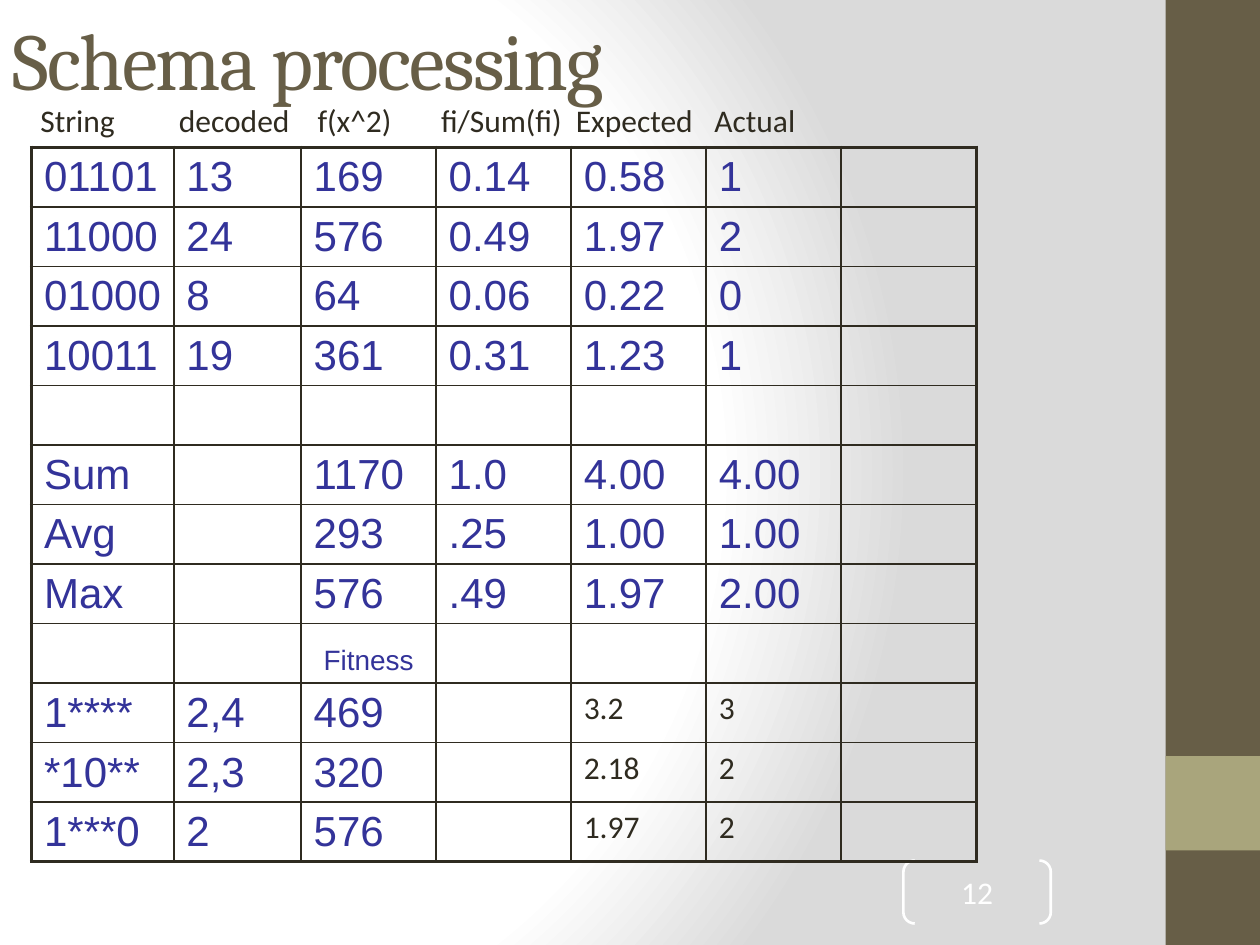
"""Build the schema processing slide with its table of strings and fitness values."""
from dataclasses import dataclass

import pptx
import pptx.dml.color
import pptx.enum.shapes
import pptx.enum.text
import pptx.oxml
import pptx.oxml.ns
import pptx.util
from pptx.util import Inches

Align = pptx.enum.text.PP_ALIGN
Anchor = pptx.enum.text.MSO_ANCHOR
Shapes = pptx.enum.shapes.MSO_SHAPE
NAMESPACES = pptx.oxml.ns.nsdecls("a", "p")

DARK, OLIVE, SAGE, WHITE, BLUE = "2F2B20", "675E47", "A9A57C", "FFFFFF", "333399"


@dataclass(frozen=True)
class TextStyle:
    font: str
    size: int
    color: str
    space_before: int = 0
    align: Align = Align.LEFT
    anchor: Anchor = Anchor.TOP
    tracking: int = 0


@dataclass(frozen=True)
class Band:
    left: float
    top: float
    width: float
    height: float
    color: str


TITLE = TextStyle("Cambria", 46, OLIVE, anchor=Anchor.MIDDLE, tracking=-100)
HEADING = TextStyle("Calibri", 18, DARK, space_before=50)
NUMBER = TextStyle("Calibri", 18, WHITE, align=Align.CENTER, anchor=Anchor.MIDDLE)
VALUE = TextStyle("Arial", 24, BLUE, space_before=20)
LABEL = TextStyle("Arial", 16, BLUE, 20, Align.CENTER, Anchor.BOTTOM)
COUNT = TextStyle("Calibri", 18, DARK)

BANDS = [Band(9.25, 0, 0.75, 7.5, OLIVE), Band(9.25, 6, 0.75, 0.75, SAGE)]
HEADINGS = ["String", "decoded", "f(x^2)", "fi/Sum(fi)", "Expected", "Actual"]
HEADING_TABS = [1.1, 2.2, 3.18, 4.25, 5.35]
TABLE_WIDTH, TABLE_HEIGHT = 7.5, 5.67
FIRST_WIDTHS = [1.13, 1.01]
COLUMN_WIDTHS = FIRST_WIDTHS + [(TABLE_WIDTH - sum(FIRST_WIDTHS)) / 5] * 5
SCHEMA_ROW, COUNT_COLUMN = 9, 4
ROWS = [
    ["01101", "13", "169", "0.14", "0.58", "1", ""],
    ["11000", "24", "576", "0.49", "1.97", "2", ""],
    ["01000", "8", "64", "0.06", "0.22", "0", ""],
    ["10011", "19", "361", "0.31", "1.23", "1", ""],
    [""] * 7,
    ["Sum", "", "1170", "1.0", "4.00", "4.00", ""],
    ["Avg", "", "293", ".25", "1.00", "1.00", ""],
    ["Max", "", "576", ".49", "1.97", "2.00", ""],
    ["", "", "Fitness", "", "", "", ""],
    ["1****", "2,4", "469", "", "3.2", "3", ""],
    ["*10**", "2,3", "320", "", "2.18", "2", ""],
    ["1***0", "2", "576", "", "1.97", "2", ""],
]


def rgb(color: str) -> pptx.dml.color.RGBColor:
    return pptx.dml.color.RGBColor.from_string(color)


def xml(markup: str):
    return pptx.oxml.parse_xml(markup.replace(" NS", f" {NAMESPACES}", 1))


def write(paragraph, text: str, style: TextStyle) -> None:
    paragraph.alignment = style.align
    if style.space_before:
        paragraph._p.get_or_add_pPr().append(
            xml(f'<a:spcBef NS><a:spcPct val="{style.space_before * 1000}"/></a:spcBef>'))
    run = paragraph.add_run()
    run.text = text
    run.font.name = style.font
    run.font.size = pptx.util.Pt(style.size)
    run.font.color.rgb = rgb(style.color)
    if style.tracking:
        run.font._element.set("spc", str(style.tracking))


def add_text(slide, left: float, top: float, width: float, height: float,
             text: str, style: TextStyle):
    shape = slide.shapes.add_textbox(Inches(left), Inches(top), Inches(width), Inches(height))
    shape.text_frame.word_wrap = True
    shape.text_frame.vertical_anchor = style.anchor
    write(shape.text_frame.paragraphs[0], text, style)
    return shape


def set_background(slide) -> None:
    stops = "".join(f'<a:gs pos="{position * 1000}"><a:srgbClr val="{color}"/></a:gs>'
                    for position, color in [(0, WHITE), (75, WHITE), (100, "DADADA")])
    slide._element.cSld.insert(0, xml(
        f'<p:bg NS><p:bgPr><a:gradFill rotWithShape="1"><a:gsLst>{stops}</a:gsLst>'
        '<a:path path="circle"><a:fillToRect l="20000" t="50000" r="100000" b="50000"/>'
        '</a:path></a:gradFill><a:effectLst/></p:bgPr></p:bg>'))


def add_band(slide, band: Band) -> None:
    shape = slide.shapes.add_shape(Shapes.RECTANGLE, Inches(band.left), Inches(band.top),
                                   Inches(band.width), Inches(band.height))
    shape.shadow.inherit = False
    shape.fill.solid()
    shape.fill.fore_color.rgb = rgb(band.color)
    shape.line.fill.background()


def add_slide_number(slide, number: str) -> None:
    shape = slide.shapes.add_shape(Shapes.DOUBLE_BRACKET, Inches(7.17), Inches(6.83),
                                   Inches(1.17), Inches(0.5))
    shape.adjustments[0] = 0.18
    shape.shadow.inherit = False
    shape.fill.background()
    shape.line.color.rgb = rgb(WHITE)
    shape.line.width = pptx.util.Pt(1.5)
    frame = shape.text_frame
    frame.margin_left = frame.margin_top = frame.margin_right = frame.margin_bottom = 0
    frame.vertical_anchor = NUMBER.anchor
    write(frame.paragraphs[0], number, NUMBER)


def add_headings(slide) -> None:
    shape = add_text(slide, 0.17, 0.75, 9.08, 0.4, "\t".join(HEADINGS), HEADING)
    shape.text_frame.margin_left = Inches(0.15)
    tabs = "".join(f'<a:tab pos="{Inches(tab)}" algn="l"/>' for tab in HEADING_TABS)
    properties = shape.text_frame.paragraphs[0]._p.get_or_add_pPr()
    properties.append(xml(f"<a:tabLst NS>{tabs}</a:tabLst>"))


def add_borders(cell, outer: dict[str, bool]) -> None:
    for side, is_outer in outer.items():
        width = pptx.util.Pt(2.25 if is_outer else 1)
        cell._tc.get_or_add_tcPr().append(xml(
            f'<a:ln{side} NS w="{width}"><a:solidFill><a:srgbClr val="{DARK}"/>'
            f'</a:solidFill></a:ln{side}>'))


def cell_style(row: int, column: int, text: str) -> TextStyle:
    if text == "Fitness":
        return LABEL
    return COUNT if row >= SCHEMA_ROW and column >= COUNT_COLUMN else VALUE


def add_schema_table(slide) -> None:
    last_row, last_column = len(ROWS) - 1, len(COLUMN_WIDTHS) - 1
    table = slide.shapes.add_table(len(ROWS), len(COLUMN_WIDTHS), Inches(0.25), Inches(1.17),
                                   Inches(TABLE_WIDTH), Inches(TABLE_HEIGHT)).table
    table.first_row = table.horz_banding = False
    for column, width in zip(table.columns, COLUMN_WIDTHS):
        column.width = Inches(width)
    for row, texts in enumerate(ROWS):
        table.rows[row].height = Inches(TABLE_HEIGHT / len(ROWS))
        for column, text in enumerate(texts):
            cell = table.cell(row, column)
            add_borders(cell, {"L": column == 0, "R": column == last_column,
                               "T": row == 0, "B": row == last_row})
            cell.fill.background()
            if text:
                style = cell_style(row, column, text)
                cell.vertical_anchor = style.anchor
                if style is VALUE:
                    cell.margin_bottom = Inches(0.01)
                write(cell.text_frame.paragraphs[0], text, style)


def main() -> None:
    presentation = pptx.Presentation()
    presentation.slide_width, presentation.slide_height = Inches(10), Inches(7.5)
    slide = presentation.slides.add_slide(presentation.slide_layouts[6])
    set_background(slide)
    for band in BANDS:
        add_band(slide, band)
    add_slide_number(slide, "12")
    add_text(slide, 0, 0, 9.42, 0.92, "Schema processing", TITLE)
    add_schema_table(slide)
    add_headings(slide)
    presentation.save("out.pptx")


if __name__ == "__main__":
    main()
